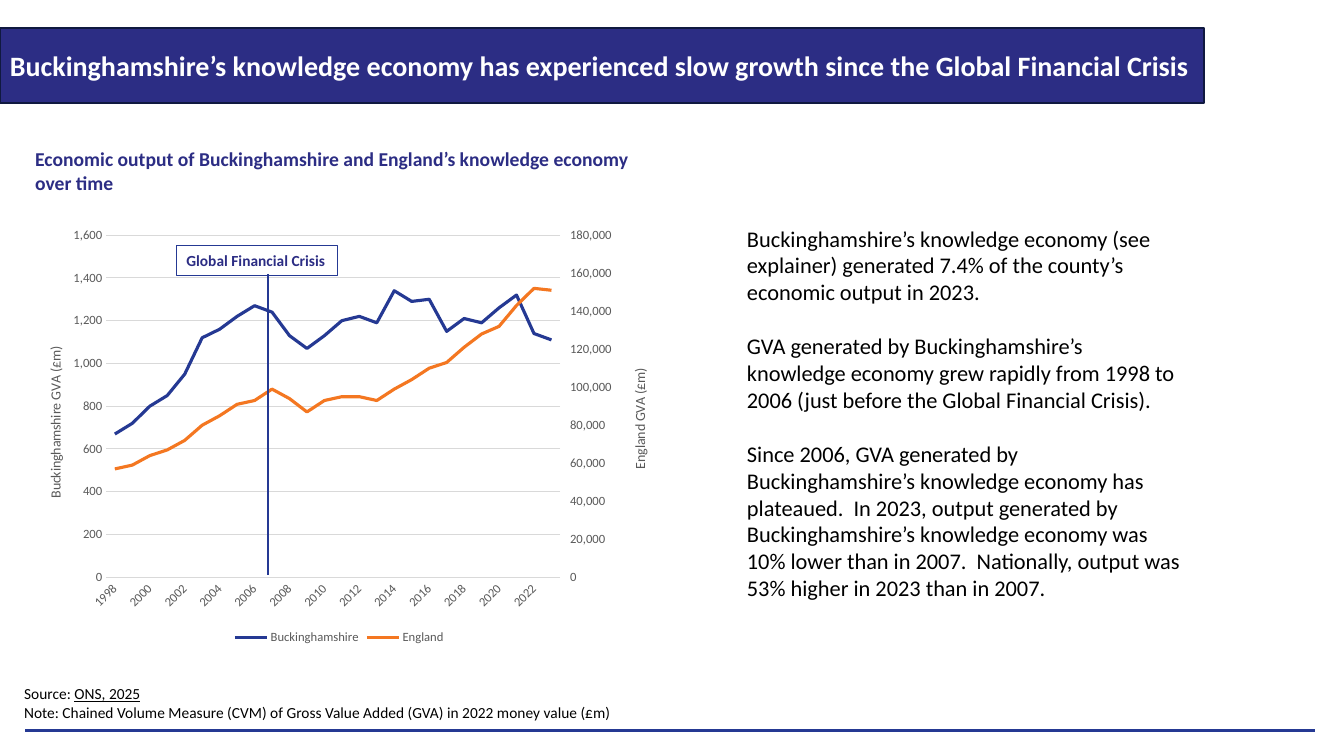
from copy import deepcopy
from dataclasses import dataclass

from lxml import etree
from pptx import Presentation
from pptx.chart.data import CategoryChartData
from pptx.dml.color import RGBColor
from pptx.enum.chart import XL_CHART_TYPE, XL_LEGEND_POSITION, XL_TICK_MARK
from pptx.enum.shapes import MSO_CONNECTOR, MSO_SHAPE
from pptx.enum.text import MSO_ANCHOR, PP_ALIGN
from pptx.oxml.ns import qn
from pptx.util import Inches, Pt

LINE_CHART = XL_CHART_TYPE.LINE
BOTTOM = XL_LEGEND_POSITION.BOTTOM
NO_TICK = XL_TICK_MARK.NONE
STRAIGHT = MSO_CONNECTOR.STRAIGHT
RECT = MSO_SHAPE.RECTANGLE
TOP, MIDDLE = MSO_ANCHOR.TOP, MSO_ANCHOR.MIDDLE
LEFT = PP_ALIGN.LEFT


@dataclass(frozen=True)
class Theme:
    font: str = "Calibri"
    navy: str = "2C2D84"
    navy_edge: str = "101940"
    blue: str = "253993"
    orange: str = "F47721"
    white: str = "FFFFFF"
    black: str = "000000"
    grey: str = "595959"
    grid: str = "D9D9D9"
    title: int = 20
    body: int = 16
    heading: int = 14
    small: int = 11
    axis_title: int = 10
    axis: int = 9


T = Theme()

YEARS = [str(year) for year in range(1998, 2024)]
BUCKS = [670, 720, 800, 850, 950, 1120, 1160, 1220, 1270, 1240, 1130, 1070, 1130,
         1200, 1220, 1190, 1340, 1290, 1300, 1150, 1210, 1190, 1260, 1320, 1140, 1110]
ENGLAND = [value * 1000 for value in (
    57, 59, 64, 67, 72, 80, 85, 91, 93, 99, 94, 87, 93,
    95, 95, 93, 99, 104, 110, 113, 121, 128, 132, 143, 152, 151)]

FINDINGS = [
    "Buckinghamshire’s knowledge economy (see explainer) generated 7.4% of the "
    "county’s economic output in 2023.",
    "GVA generated by Buckinghamshire’s knowledge economy grew rapidly from 1998 to "
    "2006 (just before the Global Financial Crisis).",
    "Since 2006, GVA generated by Buckinghamshire’s knowledge economy has plateaued.  "
    "In 2023, output generated by Buckinghamshire’s knowledge economy was 10% lower "
    "than in 2007.  Nationally, output was 53% higher in 2023 than in 2007.",
]


def set_font(font, size, color, **extra):
    values = {"name": T.font, "size": Pt(size), **extra}
    for name, value in values.items():
        setattr(font, name, value)
    font.color.rgb = RGBColor.from_string(color)


def set_line(line, color, width):
    line.color.rgb = RGBColor.from_string(color)
    line.width = Pt(width)


def write(sp, paragraphs, size, color, bold=False, gap=0, anchor=TOP):
    """Each paragraph is a list of (text, underline) runs."""
    tf = sp.text_frame
    for name, value in {"word_wrap": True, "vertical_anchor": anchor}.items():
        setattr(tf, name, value)
    for i, runs in enumerate(paragraphs):
        p = tf.add_paragraph() if i else tf.paragraphs[0]
        p.alignment = LEFT
        if i and gap:
            p.space_before = Pt(gap)
        for text, underline in runs:
            r = p.add_run()
            r.text = text
            set_font(r.font, size, color, bold=bold, underline=underline)


def add_text(s, box, paragraphs, size, color, **style):
    sp = s.shapes.add_textbox(*map(Inches, box))
    write(sp, paragraphs, size, color, **style)


def add_box(s, box, text, size, color, fill, line, **style):
    sp = s.shapes.add_shape(RECT, *map(Inches, box))
    sp.shadow.inherit = False
    if fill:
        sp.fill.solid()
        sp.fill.fore_color.rgb = RGBColor.from_string(fill)
    else:
        sp.fill.background()
    set_line(sp.line, *line)
    write(sp, [[(text, False)]], size, color, bold=True, **style)


def add_rule(s, ends, width):
    cx = s.shapes.add_connector(STRAIGHT, *map(Inches, ends))
    set_line(cx.line, T.blue, width)
    etree.SubElement(cx._element.spPr, qn("a:effectLst"))


def child(parent, tag, val):
    node = etree.SubElement(parent, qn(tag))
    node.set("val", str(val))
    return node


def manual_layout(tag_parent, inner=False, **place):
    for old in tag_parent.findall(qn("c:layout")):
        tag_parent.remove(old)
    layout = etree.Element(qn("c:layout"))
    manual = etree.SubElement(layout, qn("c:manualLayout"))
    if inner:
        child(manual, "c:layoutTarget", "inner")
    for key in ("xMode", "yMode"):
        child(manual, f"c:{key}", "edge")
    for key, value in place.items():
        child(manual, f"c:{key}", value)
    return layout


def add_right_axis(plot_area, title, top, step):
    """Move the last series to its own line group with a value axis on the right."""
    left = plot_area.find(qn("c:lineChart"))
    cat, val = plot_area.find(qn("c:catAx")), plot_area.find(qn("c:valAx"))
    right, cat2, val2 = map(deepcopy, (left, cat, val))
    left.remove(left.findall(qn("c:ser"))[1])
    right.remove(right.findall(qn("c:ser"))[0])
    left.addnext(right)
    val.addnext(val2)
    val2.addnext(cat2)

    cat_id, val_id = "50010", "50020"
    for node, new_id in zip(right.findall(qn("c:axId")), (cat_id, val_id)):
        node.set("val", new_id)
    val2.remove(val2.find(qn("c:majorGridlines")))
    for axis, values in (
        (cat2, {"axId": cat_id, "crossAx": val_id, "delete": "1"}),
        (val2, {"axId": val_id, "crossAx": cat_id, "axPos": "r", "crosses": "max",
                "majorTickMark": "out", "majorUnit": step, "scaling/c:max": top}),
    ):
        for tag, value in values.items():
            node = axis.find("/".join(qn(t) for t in f"c:{tag}".split("/")))
            node.set("val", str(value))
    heading = val2.find(qn("c:title"))
    next(heading.iter(qn("a:t"))).text = title
    old = heading.find(qn("c:layout"))
    old.addnext(manual_layout(heading, x=0.95, y=0.34)) if old is None else \
        heading.replace(old, manual_layout(etree.Element("x"), x=0.95, y=0.34))


def add_gva_chart(s, box):
    data = CategoryChartData(number_format="#,##0")
    data.categories = YEARS
    data.add_series("Buckinghamshire", BUCKS)
    data.add_series("England", ENGLAND)
    chart = s.shapes.add_chart(LINE_CHART, *map(Inches, box), data).chart
    set_font(chart.font, T.axis_title, T.black)
    chart.has_title = False
    chart.has_legend = True
    chart.legend.position = BOTTOM
    chart.legend.include_in_layout = False
    set_font(chart.legend.font, T.axis, T.grey)

    plot = chart.plots[0]
    plot.vary_by_categories = False
    for series, color in zip(plot.series, (T.blue, T.orange)):
        series.smooth = False
        set_line(series.format.line, color, 2.25)

    # Category and left value axes
    cat, val = chart.category_axis, chart.value_axis
    for axis in (cat, val):
        axis.major_tick_mark = axis.minor_tick_mark = NO_TICK
        set_font(axis.tick_labels.font, T.axis, T.grey)
    set_line(cat.format.line, T.grid, 0.75)
    cat._element.find(qn("c:txPr")).find(qn("a:bodyPr")).set("rot", "-2700000")
    skip = etree.Element(qn("c:tickLblSkip"), val="2")
    cat._element.find(qn("c:noMultiLvlLbl")).addprevious(skip)

    for name, value in {"minimum_scale": 0, "maximum_scale": 1600, "major_unit": 200,
                        "has_major_gridlines": True}.items():
        setattr(val, name, value)
    val.tick_labels.number_format = "#,##0"
    val.tick_labels.number_format_is_linked = False
    val.format.line.fill.background()
    set_line(val.major_gridlines.format.line, T.grid, 0.75)
    if val._element.find(qn("c:crossBetween")) is None:
        between = etree.Element(qn("c:crossBetween"), val="between")
        val._element.find(qn("c:crosses")).addnext(between)

    tf = val.axis_title.text_frame
    p = tf.paragraphs[0]
    r = p.add_run()
    r.text = "Buckinghamshire GVA (£m)"
    set_font(r.font, T.axis_title, T.grey, bold=False)
    for key, value in {"rot": "-5400000", "vert": "horz"}.items():
        tf._txBody.find(qn("a:bodyPr")).set(key, value)
    heading = val.axis_title._element
    layout = manual_layout(heading, x=0.04, y=0.29)
    heading.find(qn("c:tx")).addnext(layout)

    # Plot frame and right value axis
    plot_area = chart._chartSpace.chart.plotArea
    frame = manual_layout(plot_area, inner=True, x=0.137, y=0.036, w=0.707, h=0.797)
    plot_area.insert(0, frame)
    add_right_axis(plot_area, "England GVA (£m)", 180000, 20000)


def main():
    prs = Presentation()
    prs.slide_width, prs.slide_height = Inches(13.33), Inches(7.5)
    s = prs.slides.add_slide(prs.slide_layouts[6])

    # Footer rule and title band
    add_rule(s, (0.25, 7.25, 13.04, 7.25), 2.25)
    add_box(s, (0, 0.28, 11.94, 0.74),
            "Buckinghamshire’s knowledge economy has experienced slow growth since "
            "the Global Financial Crisis",
            T.title, T.white, T.navy, (T.navy_edge, 1.5), anchor=MIDDLE)

    # Chart heading and findings
    add_text(s, (0.25, 1.41, 6.37, 0.57),
             [[("Economic output of Buckinghamshire and England’s knowledge economy "
                "over time", False)]], T.heading, T.navy, bold=True)
    add_text(s, (7.31, 2.18, 4.51, 4.14), [[(text, False)] for text in FINDINGS],
             T.body, T.black, gap=19.3)

    # Chart with the crisis marker
    add_gva_chart(s, (0.18, 2.18, 6.37, 4.26))
    add_rule(s, (2.66, 5.7, 2.66, 2.72), 1.5)
    add_box(s, (1.75, 2.44, 1.6, 0.29), "Global Financial Crisis",
            T.small, T.navy, None, (T.blue, 0.75))

    # Source and note
    add_text(s, (0.14, 6.74, 7.55, 0.66),
             [[("Source: ", False), ("ONS, 2025", True)],
              [("Note: Chained Volume Measure (CVM) of Gross Value Added (GVA) in 2022 "
                "money value (£m)", False)]], T.small, T.black)
    prs.save("out.pptx")


if __name__ == "__main__":
    main()
